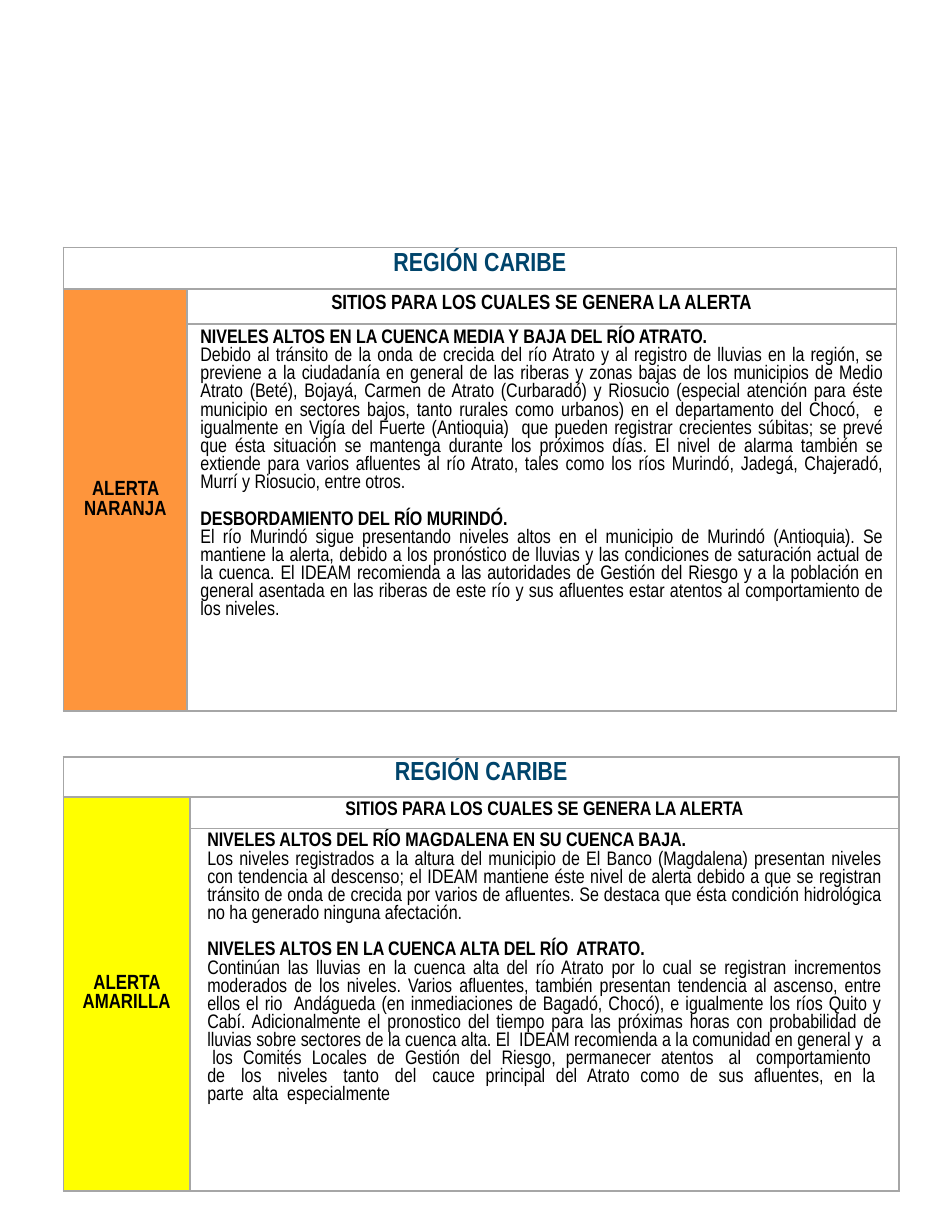
from dataclasses import dataclass
from typing import NamedTuple

from lxml.etree import SubElement
from pptx import Presentation
from pptx.dml.color import RGBColor
from pptx.enum.text import MSO_ANCHOR as Anchor, PP_ALIGN as Align
from pptx.oxml.ns import qn
from pptx.util import Cm, Pt


@dataclass(frozen=True)
class Theme:
    font: str = "Arial Narrow"
    region: str = "00446B"
    ink: str = "000000"
    border: str = "A6A6A6"
    orange: str = "FE953C"
    yellow: str = "FFFF00"
    region_size: float = 14
    label_size: float = 11
    body_size: float = 10.5
    border_width: float = 1
    notice_gap: float = 9.8


class Notice(NamedTuple):
    heading: str
    detail: str


class Line(NamedTuple):
    text: str
    size: float
    color: str
    bold: bool = True
    align: Align = Align.CENTER
    gap: float = 0


@dataclass(frozen=True)
class Alert:
    level: str
    color: str
    top: float
    columns: tuple[float, float]
    rows: tuple[float, float, float]
    side_margin: float
    edge_margin: float
    sites_size: float
    notices: tuple[Notice, ...]


THEME = Theme()
LEFT = 1.2
REGION = "REGIÓN CARIBE"
SITES = "SITIOS PARA LOS CUALES SE GENERA LA ALERTA"

ALERTS = (
    Alert(
        "ALERTA NARANJA", THEME.orange, 4.68, (2.34, 13.41), (0.79, 0.66, 7.32),
        0.25, 0.1, THEME.label_size,
        (
            Notice(
                "NIVELES ALTOS EN LA CUENCA MEDIA Y BAJA DEL RÍO ATRATO.",
                "Debido al tránsito de la onda de crecida del río Atrato y al registro de "
                "lluvias en la región, se previene a la ciudadanía en general de las riberas "
                "y zonas bajas de los municipios de Medio Atrato (Beté), Bojayá, Carmen de "
                "Atrato (Curbaradó) y Riosucio (especial atención para éste municipio en "
                "sectores bajos, tanto rurales como urbanos) en el departamento del Chocó,  e "
                "igualmente en Vigía del Fuerte (Antioquia)  que pueden registrar crecientes "
                "súbitas; se prevé que ésta situación se mantenga durante los próximos días. "
                "El nivel de alarma también se extiende para varios afluentes al río Atrato, "
                "tales como los ríos Murindó, Jadegá, Chajeradó, Murrí y Riosucio, entre otros.",
            ),
            Notice(
                "DESBORDAMIENTO DEL RÍO MURINDÓ.",
                "El río Murindó sigue presentando niveles altos en el municipio de Murindó "
                "(Antioquia). Se mantiene la alerta, debido a los pronóstico de lluvias y las "
                "condiciones de saturación actual de la cuenca. El IDEAM recomienda a las "
                "autoridades de Gestión del Riesgo y a la población en general asentada en las "
                "riberas de este río y sus afluentes estar atentos al comportamiento de los "
                "niveles.",
            ),
        ),
    ),
    Alert(
        "ALERTA AMARILLA", THEME.yellow, 14.32, (2.39, 13.41), (0.75, 0.6, 6.85),
        0.33, 0.08, THEME.body_size,
        (
            Notice(
                "NIVELES ALTOS DEL RÍO MAGDALENA EN SU CUENCA BAJA.",
                "Los niveles registrados a la altura del municipio de El Banco (Magdalena) "
                "presentan niveles con tendencia al descenso; el IDEAM mantiene éste nivel de "
                "alerta debido a que se registran tránsito de onda de crecida por varios de "
                "afluentes. Se destaca que ésta condición hidrológica no ha generado ninguna "
                "afectación.",
            ),
            Notice(
                "NIVELES ALTOS EN LA CUENCA ALTA DEL RÍO  ATRATO.",
                "Continúan las lluvias en la cuenca alta del río Atrato por lo cual se "
                "registran incrementos moderados de los niveles. Varios afluentes, también "
                "presentan tendencia al ascenso, entre ellos el rio  Andágueda (en "
                "inmediaciones de Bagadó, Chocó), e igualmente los ríos Quito y Cabí. "
                "Adicionalmente el pronostico del tiempo para las próximas horas con "
                "probabilidad de lluvias sobre sectores de la cuenca alta. El  IDEAM "
                "recomienda a la comunidad en general y  a  los  Comités  Locales  de  Gestión  "
                "del  Riesgo,  permanecer  atentos   al   comportamiento   de   los   niveles   "
                "tanto   del   cauce  principal  del  Atrato  como  de  sus  afluentes,  en  la  "
                "parte  alta  especialmente",
            ),
        ),
    ),
)


def apply_format(target, values: dict) -> None:
    for attribute, value in values.items():
        setattr(target, attribute, value)


def add_borders(cell) -> None:
    properties = cell._tc.get_or_add_tcPr()
    for side in ("lnL", "lnR", "lnT", "lnB"):
        line = SubElement(properties, qn(f"a:{side}"), w=str(Pt(THEME.border_width)))
        fill = SubElement(line, qn("a:solidFill"))
        SubElement(fill, qn("a:srgbClr"), val=THEME.border)


def write_lines(cell, lines: list[Line]) -> None:
    frame = cell.text_frame
    for index, line in enumerate(lines):
        paragraph = frame.add_paragraph() if index else frame.paragraphs[0]
        paragraph.alignment = line.align
        if line.gap:
            paragraph.space_before = Pt(line.gap)
        run = paragraph.add_run()
        run.text = line.text
        apply_format(run.font, {"name": THEME.font, "size": Pt(line.size), "bold": line.bold})
        run.font.color.rgb = RGBColor.from_string(line.color)


def notice_lines(notices: tuple[Notice, ...]) -> list[Line]:
    lines = []
    for index, notice in enumerate(notices):
        gap = THEME.notice_gap if index else 0
        lines += [
            Line(notice.heading, THEME.body_size, THEME.ink, True, Align.JUSTIFY, gap),
            Line(notice.detail, THEME.body_size, THEME.ink, False, Align.JUSTIFY),
        ]
    return lines


def draw_alert(slide, alert: Alert) -> None:
    bulletin = slide.shapes.add_table(
        len(alert.rows), len(alert.columns), Cm(LEFT), Cm(alert.top),
        Cm(sum(alert.columns)), Cm(sum(alert.rows)),
    ).table
    apply_format(bulletin, {"first_row": False, "horz_banding": False})
    for column, width in zip(bulletin.columns, alert.columns):
        column.width = Cm(width)
    for row, height in zip(bulletin.rows, alert.rows):
        row.height = Cm(height)

    side, edge = Cm(alert.side_margin), Cm(alert.edge_margin)
    for cell in bulletin.iter_cells():
        apply_format(cell, {
            "margin_left": side, "margin_right": side,
            "margin_top": edge, "margin_bottom": edge,
            "vertical_anchor": Anchor.TOP,
        })
        add_borders(cell)
        cell.fill.background()

    region, level = bulletin.cell(0, 0), bulletin.cell(1, 0)
    region.merge(bulletin.cell(0, 1))
    level.merge(bulletin.cell(2, 0))
    level.vertical_anchor = Anchor.MIDDLE
    level.fill.solid()
    level.fill.fore_color.rgb = RGBColor.from_string(alert.color)

    write_lines(region, [Line(REGION, THEME.region_size, THEME.region)])
    write_lines(level, [Line(alert.level, THEME.label_size, THEME.ink)])
    write_lines(bulletin.cell(1, 1), [Line(SITES, alert.sites_size, THEME.ink)])
    write_lines(bulletin.cell(2, 1), notice_lines(alert.notices))


def main() -> None:
    presentation = Presentation()
    presentation.slide_width = Cm(18)
    presentation.slide_height = Cm(23.3)
    slide = presentation.slides.add_slide(presentation.slide_layouts[6])
    for alert in ALERTS:
        draw_alert(slide, alert)
    presentation.save("out.pptx")


if __name__ == "__main__":
    main()
